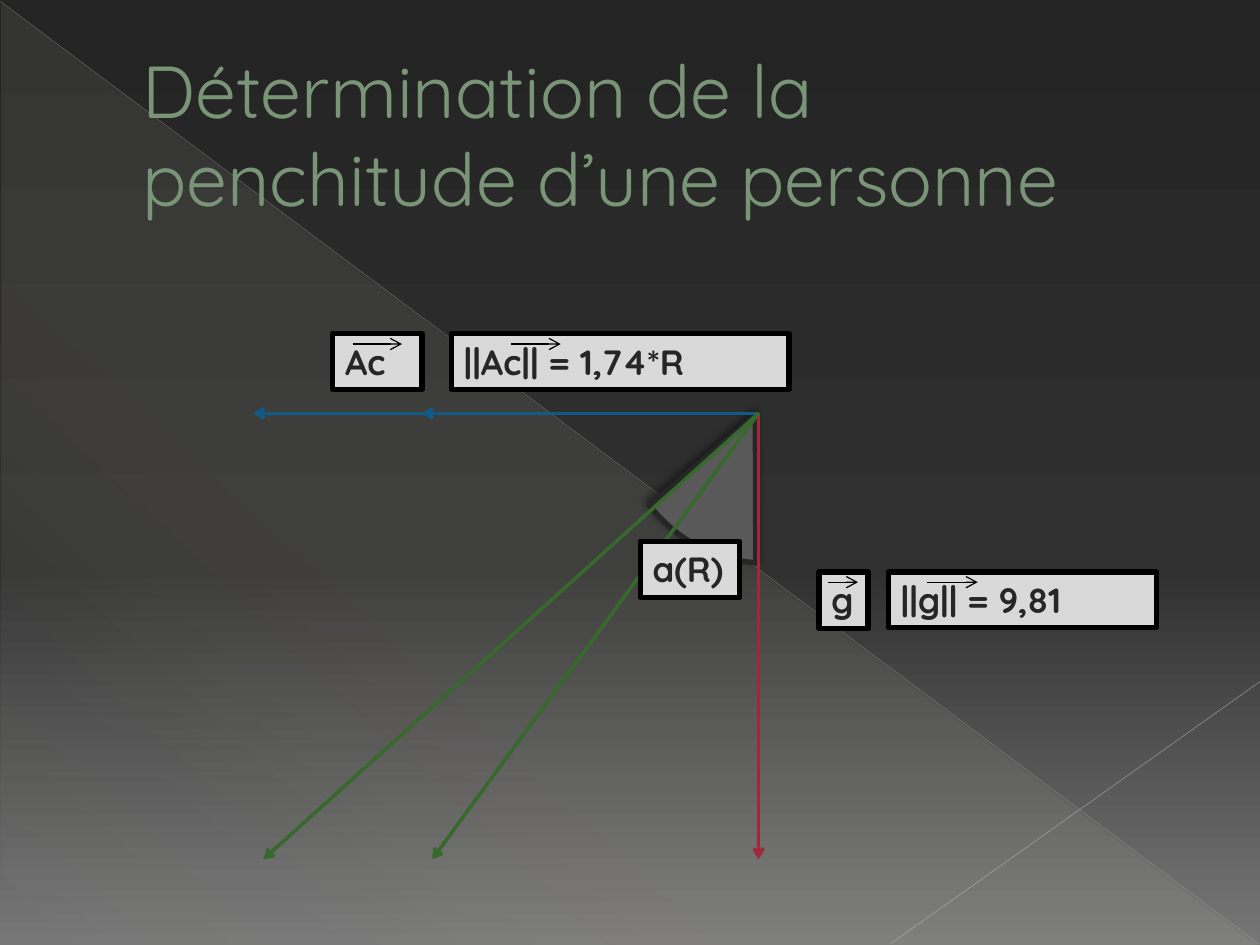
import pptx
import pptx.util
import pptx.dml.color
import pptx.enum.shapes
import pptx.enum.text
import pptx.oxml
import pptx.oxml.ns

Pt = pptx.util.Pt
qn = pptx.oxml.ns.qn
Kind = pptx.enum.shapes.MSO_SHAPE
FONT = "Quicksand"
NS = 'xmlns:a="http://schemas.openxmlformats.org/drawingml/2006/main"'
HEX = {
    "night": "242424", "coal": "303030", "ash": "767676", "cream": "E3DED1",
    "mist": "B6B6B6", "fog": "BFBFBF", "sage": "7A9477", "moss": "284522",
    "red": "9F2936", "blue": "115A86", "green": "37682C", "black": "000000",
    "ink": "262626", "slate": "595959", "pale": "D9D9D9",
}


def rgb(name):
    return pptx.dml.color.RGBColor.from_string(HEX[name])


def node(body):
    head, rest = body.split(">", 1)
    if head.endswith("/"):
        return pptx.oxml.parse_xml(f"{head[:-1]} {NS}/>{rest}")
    return pptx.oxml.parse_xml(f"{head} {NS}>{rest}")


def blend(fill, props, stops, angle):
    fill.gradient()
    marks = "".join(
        f'<a:gs pos="{pos * 1000}"><a:srgbClr val="{HEX[name]}">'
        f'<a:alpha val="{alpha * 1000}"/></a:srgbClr></a:gs>'
        for pos, name, alpha in stops)
    old = props.find(qn("a:gradFill"))
    props.replace(old, node(
        f'<a:gradFill rotWithShape="1"><a:gsLst>{marks}</a:gsLst>'
        f'<a:lin ang="{angle * 60000}" scaled="0"/></a:gradFill>'))


def line(slide, start, end, color, width, head=False, alpha=None):
    item = slide.shapes.add_connector(
        pptx.enum.shapes.MSO_CONNECTOR.STRAIGHT, *map(Pt, start + end))
    item.line.color.rgb = rgb(color)
    item.line.width = Pt(width)
    props = item._element.spPr
    stroke = props.find(qn("a:ln"))
    if alpha:
        stroke.find(".//" + qn("a:srgbClr")).append(
            node(f'<a:alpha val="{alpha * 1000}"/>'))
    if head:
        stroke.append(node('<a:tailEnd type="arrow"/>'))
    props.append(node("<a:effectLst/>"))


def style(para, size, color, bold=False):
    for run in para.runs:
        font = run.font
        font.name, font.size, font.bold = FONT, Pt(size), bold
        font.color.rgb = rgb(color)


def label(slide, text, left, top, wide, high=31.7, vector=None):
    box = slide.shapes.add_textbox(*map(Pt, (left, top, wide, high)))
    box.fill.solid()
    box.fill.fore_color.rgb = rgb("pale")
    box.line.color.rgb = rgb("black")
    box.line.width = Pt(3)
    frame = box.text_frame
    frame.word_wrap = True
    frame.auto_size = pptx.enum.text.MSO_AUTO_SIZE.SHAPE_TO_FIT_TEXT
    frame.text = text
    style(frame.paragraphs[0], 20, "ink", True)
    if vector:
        y = top + 5.8
        line(slide, (left + vector[0], y), (left + vector[1], y),
             "black", 0.75, head=True)


def title(slide, text):
    box = slide.shapes.add_textbox(Pt(36), Pt(20.9), Pt(648), Pt(110.2))
    frame = box.text_frame
    frame.word_wrap = True
    frame.vertical_anchor = pptx.enum.text.MSO_ANCHOR.MIDDLE
    frame.text = text
    para = frame.paragraphs[0]
    style(para, 42, "sage")
    para._p.get_or_add_pPr().set("marL", str(Pt(38.2)))
    para.runs[0].font._element.insert(0, node(
        f'<a:ln w="{Pt(0.5)}"><a:solidFill><a:srgbClr val="{HEX["moss"]}"/>'
        '</a:solidFill></a:ln>'))


def scene(slide):
    fill = slide.background.fill
    fill.solid()
    props = slide._element.find(".//" + qn("p:bgPr"))
    blend(fill, props,
          [(0, "night", 100), (60, "coal", 100), (100, "ash", 100)], 90)
    wedge = slide.shapes.add_shape(
        Kind.RIGHT_TRIANGLE, Pt(0.7), Pt(1.4), Pt(718.6), Pt(538.6))
    wedge.shadow.inherit = False
    wedge.line.fill.background()
    blend(wedge.fill, wedge._element.spPr,
          [(0, "cream", 10), (70, "cream", 8), (100, "cream", 1)], 133)
    line(slide, (0, 0.7), (719.3, 539.3), "mist", 0.39, alpha=35)
    line(slide, (720, 389.5), (509, 539.3), "fog", 0.47, alpha=45)


def angle(slide):
    pie = slide.shapes.add_shape(
        Kind.PIE, Pt(346.3), Pt(158.4), Pt(170.6), Pt(157.7))
    pie.rotation = 247
    pie.adjustments[0] = 121.69
    pie.adjustments[1] = 151.6
    pie.fill.solid()
    pie.fill.fore_color.rgb = rgb("slate")
    pie.line.color.rgb = rgb("ink")
    pie.line.width = Pt(3)
    pie.shadow.inherit = False
    pie._element.spPr.find(qn("a:effectLst")).append(node(
        f'<a:outerShdw blurRad="{Pt(5)}" dist="{Pt(2)}" dir="{245 * 60000}" '
        f'rotWithShape="0"><a:srgbClr val="{HEX["black"]}">'
        '<a:alpha val="50000"/></a:srgbClr></a:outerShdw>'))


def main():
    deck = pptx.Presentation()
    deck.slide_width, deck.slide_height = Pt(720), Pt(540)
    slide = deck.slides.add_slide(deck.slide_layouts[6])
    scene(slide)
    angle(slide)
    title(slide, "Détermination de la penchitude d’une personne")

    x, y, low = 433.5, 236.2, 491
    for end, color in [((x, low), "red"), ((241.2, y), "blue"),
                       ((247, low), "green"), ((144.7, y), "blue"),
                       ((150.5, low), "green")]:
        line(slide, (x, y), end, color, 2, head=True)

    high, mid = 190.8, 326.9
    label(slide, "g", 468, mid, 28.1, 32.4, vector=(5, 22.3))
    label(slide, "Ac", 190.1, high, 51.1, vector=(11.5, 39.6))
    label(slide, "||Ac|| = 1,74*R", 257.8, high, 193, vector=(34.5, 62.6))
    label(slide, "a(R)", 365.8, 309.6, 56.9)
    label(slide, "||g|| = 9,81", 507.6, mid, 153.4, vector=(22.3, 51.1))
    deck.save("out.pptx")


if __name__ == "__main__":
    main()
